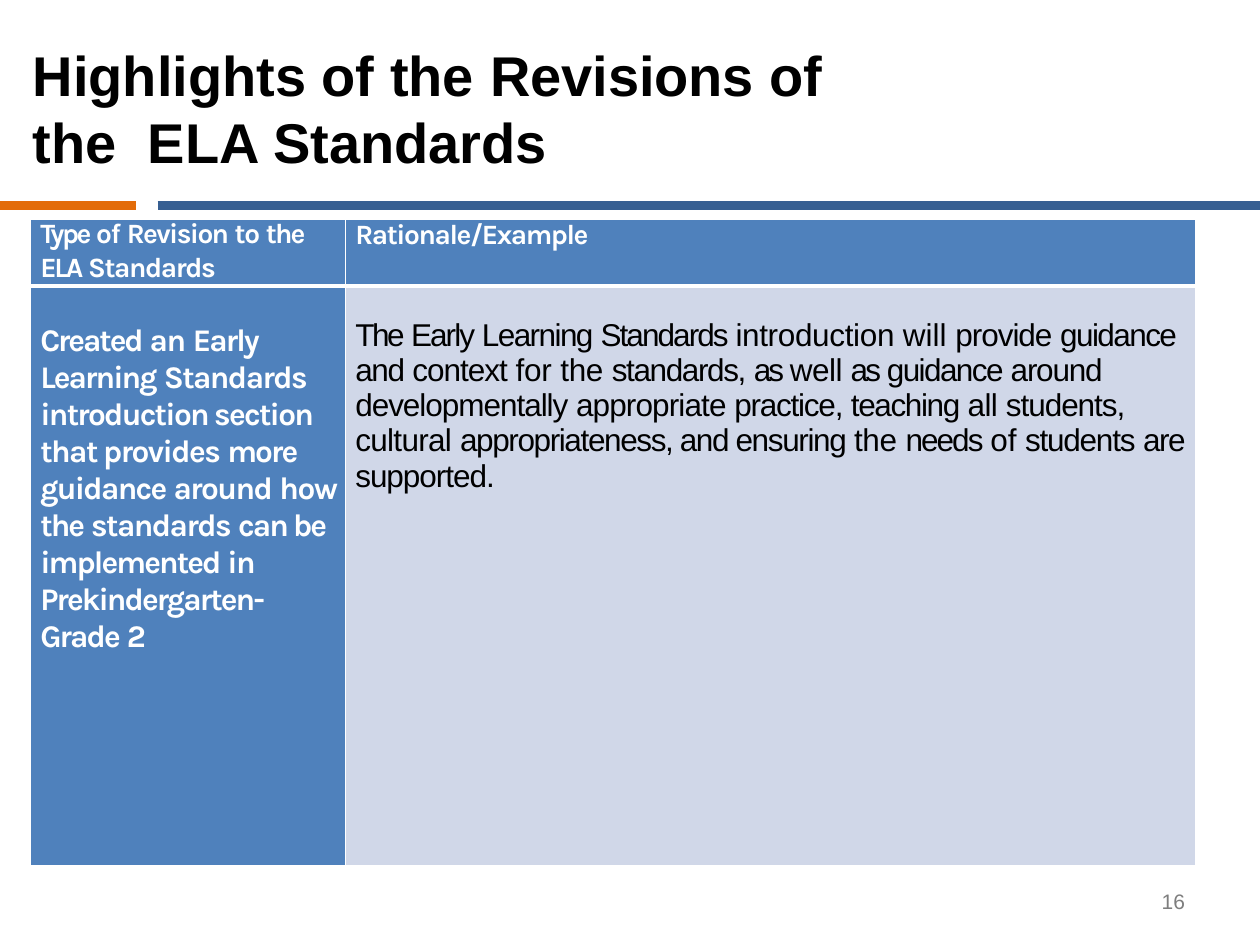
"""Build the ELA standards revision slide with its two-column table."""
from lxml import etree
from pptx import Presentation
from pptx.dml.color import RGBColor
from pptx.enum.shapes import MSO_CONNECTOR
from pptx.enum.text import MSO_ANCHOR, PP_ALIGN
from pptx.oxml import parse_xml
from pptx.oxml.ns import nsdecls, qn
from pptx.util import Inches, Pt

COLORS = {
    "black": "000000", "white": "FFFFFF", "gray": "7E7E7E", "orange": "E36C09",
    "navy": "375F92", "blue": "4F81BC", "pale": "D0D7E8",
}


def add_runs(para, runs, face, size, color, bold=False):
    for text, spacing in runs:
        span = para.add_run()
        span.text = text
        span.font.name = face
        span.font.size = Pt(size)
        span.font.bold = bold
        span.font.color.rgb = RGBColor.from_string(COLORS[color])
        if spacing:
            span.font._element.set("spc", str(round(spacing * 100)))


def set_borders(cell, widths):
    for index, (side, width) in enumerate(zip("LRTB", widths)):
        line = parse_xml(
            f'<a:ln{side} {nsdecls("a")} w="{Pt(width)}"><a:solidFill>'
            f'<a:srgbClr val="{COLORS["white"]}"/></a:solidFill></a:ln{side}>')
        cell._tc.get_or_add_tcPr().insert(index, line)


deck = Presentation()
deck.slide_width, deck.slide_height = Inches(10), Inches(7.5)
page = deck.slides.add_slide(deck.slide_layouts[5])

for start, end, color in [(1.25, 10, "navy"), (0, 1.08, "orange")]:
    rule = page.shapes.add_connector(
        MSO_CONNECTOR.STRAIGHT, Inches(start), Inches(1.63), Inches(end), Inches(1.63))
    rule.line.color.rgb = RGBColor.from_string(COLORS[color])
    rule.line.width = Pt(5.28)
    etree.SubElement(rule._element.spPr, qn("a:effectLst"))

title = page.shapes.title
title.left, title.top, title.width, title.height = map(Inches, (0.25, 0.3, 7.08, 1.1))
number = page.shapes.add_textbox(Inches(9.19), Inches(7.05), Inches(0.24), Inches(0.21))
for box, left, top, right in [(title, 0.01, 0.02, 0.1), (number, 0.03, 0, 0)]:
    frame = box.text_frame
    frame.word_wrap = True
    frame.vertical_anchor = MSO_ANCHOR.TOP
    frame.margin_left, frame.margin_top = Inches(left), Inches(top)
    frame.margin_right, frame.margin_bottom = Inches(right), 0
    frame.paragraphs[0].alignment = PP_ALIGN.LEFT

add_runs(title.text_frame.paragraphs[0],
         [("Highlights of the ", 0), ("Revisions ", -0.1), ("of the  ELA Standards", 0)],
         "Arial", 32, "black", True)
number_para = number.text_frame.paragraphs[0]
number_para.line_spacing = Pt(14.3)
add_runs(number_para, [("16", 0)], "Arial", 12, "gray")

type_heading = [("Type ", -1.4), ("of ", -0.7), ("Revision ", -0.9), ("to ", -0.8), ("the", -1)]
type_heading_end = [("ELA ", -1.3), ("Standards", -0.8)]
rationale_heading = [("Rationale/Example", -0.8)]
revision = [
    ("Created ", -1.2), ("an ", -0.8), ("Early Learning ", -1.1), ("Standards ", -0.9),
    ("introduction section ", -1), ("that provides ", -0.9), ("more ", -1.1),
    ("guidance ", -1), ("around ", -0.9), ("how  ", -0.8), ("the ", -1.1),
    ("standards ", -0.9), ("can be  implemented ", -1.1), ("in  ", -0.9),
    ("Prekindergarten- Grade ", -1.1), ("2", -1.4),
]
rationale = [
    ("The ", -1.4), ("Early ", -1.1), ("Learning ", -0.9), ("Standards ", -1.1),
    ("introduction ", -0.2), ("will ", 0), ("provide ", -0.6), ("guidance ", -0.9),
    ("and ", -0.8), ("context ", -0.6), ("for ", -0.1), ("the ", -0.2),
    ("standards, ", -0.8), ("as ", -1.7), ("well ", -0.3), ("as ", -1.7),
    ("guidance ", -0.9), ("around ", -0.7), ("developmentally ", -0.6),
    ("appropriate ", -0.5), ("practice, ", -0.7), ("teaching ", -0.8), ("all ", -0.4),
    ("students, ", -0.6), ("cultural ", -0.4), ("appropriateness, and ensuring ", -0.8),
    ("the ", -0.2), ("needs ", -1.1), ("of ", -0.1), ("students ", -0.7),
    ("are  ", -0.8), ("supported.", -0.6),
]

table = page.shapes.add_table(
    2, 2, Inches(0.24), Inches(1.74), Inches(9.25), Inches(5.13)).table
for column, width in zip(table.columns, (2.5, 6.75)):
    column.width = Inches(width)
for row, height in zip(table.rows, (0.53, 4.6)):
    row.height = Inches(height)

heading_style = ("Karla", 16, "white", True)
cells = [
    (0, 0, "blue", 0, [(type_heading, 18.2), (type_heading_end, 19.1)], heading_style),
    (0, 1, "blue", 0, [(rationale_heading, 18.4)], heading_style),
    (1, 0, "blue", 0.29, [(revision, None)], ("Karla", 18, "white", True)),
    (1, 1, "pale", 0.25, [(rationale, None)], ("Arial", 18, "black", False)),
]
for row, column, fill, top, paragraphs, style in cells:
    cell = table.cell(row, column)
    cell.fill.solid()
    cell.fill.fore_color.rgb = RGBColor.from_string(COLORS[fill])
    set_borders(cell, (1, 1, 1, 3) if row == 0 else (1, 1, 3, 1))
    cell.margin_left, cell.margin_top = Inches(0.08), Inches(top)
    cell.margin_right = cell.margin_bottom = 0
    cell.vertical_anchor = MSO_ANCHOR.TOP
    for index, (runs, leading) in enumerate(paragraphs):
        para = cell.text_frame.add_paragraph() if index else cell.text_frame.paragraphs[0]
        if leading:
            para.line_spacing = Pt(leading)
        add_runs(para, runs, *style)

deck.save("out.pptx")
